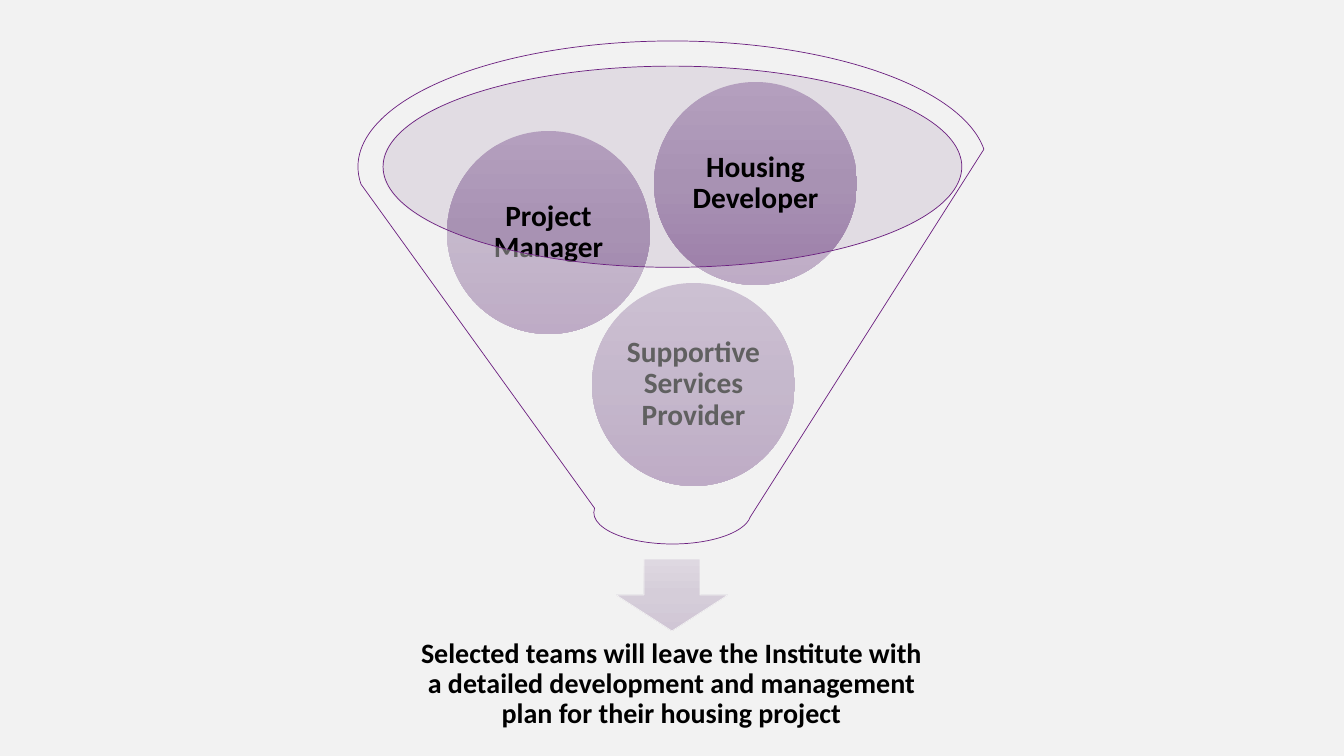
from copy import deepcopy
from typing import NamedTuple

from lxml.etree import SubElement
from pptx import Presentation
from pptx.dml.color import RGBColor as Rgb
from pptx.enum.shapes import MSO_SHAPE as Kind
from pptx.enum.text import MSO_ANCHOR as Anchor, PP_ALIGN as Align
from pptx.oxml.ns import qn
from pptx.shapes.autoshape import Shape
from pptx.slide import Slide
from pptx.util import Emu, Pt

WIDE, HIGH = 1344, 756
SCALE = 12192000 / WIDE
BALL = 203

PAPER = Rgb(0xF2, 0xF2, 0xF2)
BLACK = Rgb(0x00, 0x00, 0x00)
PURPLE = Rgb(0x6C, 0x20, 0x80)
LILAC = Rgb(0xC8, 0xBD, 0xCD)
BALL_FADE = (Rgb(0xB4, 0x9F, 0xBE), Rgb(0xA8, 0x92, 0xB3), Rgb(0x9C, 0x7D, 0xA9))
ARROW_FADE = (Rgb(0xDE, 0xD8, 0xE1), Rgb(0xD5, 0xCD, 0xD9), Rgb(0xD0, 0xC6, 0xD5))


class Box(NamedTuple):
    left: int
    top: int
    width: int
    height: int


class Role(NamedTuple):
    left: int
    top: int
    name: str


ROLES = (
    Role(592, 283, "Supportive Services Provider"),
    Role(447, 131, "Project Manager"),
    Role(654, 82, "Housing Developer"),
)
RESULT = ("Selected teams will leave the Institute with a detailed "
          "development and management plan for their housing project")


def px(size: int) -> Emu:
    return Emu(round(size * SCALE))


def place(box: Box) -> list[Emu]:
    return [px(size) for size in box]


def draw(slide: Slide, kind: Kind, box: Box, edge: Rgb | None = None) -> Shape:
    shape = slide.shapes.add_shape(kind, *place(box))
    shape.shadow.inherit = False
    if edge is None:
        shape.line.fill.background()
    else:
        shape.line.color.rgb = edge
        shape.line.width = Pt(0.5)
    return shape


def tint(shape: Shape, color: Rgb, percent: int) -> None:
    shape.fill.solid()
    shape.fill.fore_color.rgb = color
    node = shape.fill._xPr.find(qn("a:solidFill"))[0]
    SubElement(node, qn("a:alpha"), val=str(percent * 1000))


def fade(shape: Shape, colors: tuple[Rgb, ...]) -> None:
    shape.fill.gradient()
    shape.fill.gradient_angle = 270
    stops = shape.fill._xPr.find(qn("a:gradFill")).find(qn("a:gsLst"))
    stops.insert(1, deepcopy(stops[0]))
    for index, stop in enumerate(shape.fill.gradient_stops):
        stop.position = index / 2
        stop.color.rgb = colors[index]


def write(shape: Shape, text: str, size: int, inset: int) -> None:
    frame = shape.text_frame
    frame.word_wrap = True
    frame.vertical_anchor = Anchor.MIDDLE
    frame.margin_left = frame.margin_right = px(inset)
    frame.margin_top = frame.margin_bottom = px(inset)
    para = frame.paragraphs[0]
    para.alignment = Align.CENTER
    para.line_spacing = 0.9
    run = para.add_run()
    run.text = text
    run.font.name = "Calibri"
    run.font.size = Pt(size)
    run.font.bold = True
    run.font.color.rgb = BLACK


def main() -> None:
    deck = Presentation()
    deck.slide_width, deck.slide_height = px(WIDE), px(HIGH)
    slide = deck.slides.add_slide(deck.slide_layouts.get_by_name("Blank"))
    slide.background.fill.solid()
    slide.background.fill.fore_color.rgb = PAPER

    rim = draw(slide, Kind.OVAL, Box(382, 66, 580, 202))
    tint(rim, LILAC, 40)

    arrow = draw(slide, Kind.DOWN_ARROW, Box(616, 559, 112, 72), PAPER)
    fade(arrow, ARROW_FADE)

    result = slide.shapes.add_textbox(*place(Box(402, 617, 539, 135)))
    write(result, RESULT, 20, 16)

    for role in ROLES:
        ball = draw(slide, Kind.OVAL, Box(role.left, role.top, BALL, BALL))
        fade(ball, BALL_FADE)
        write(ball, role.name, 21, 3)

    funnel = draw(slide, Kind.FUNNEL, Box(358, 41, 629, 503), PURPLE)
    tint(funnel, PAPER, 40)

    deck.save("out.pptx")


if __name__ == "__main__":
    main()
